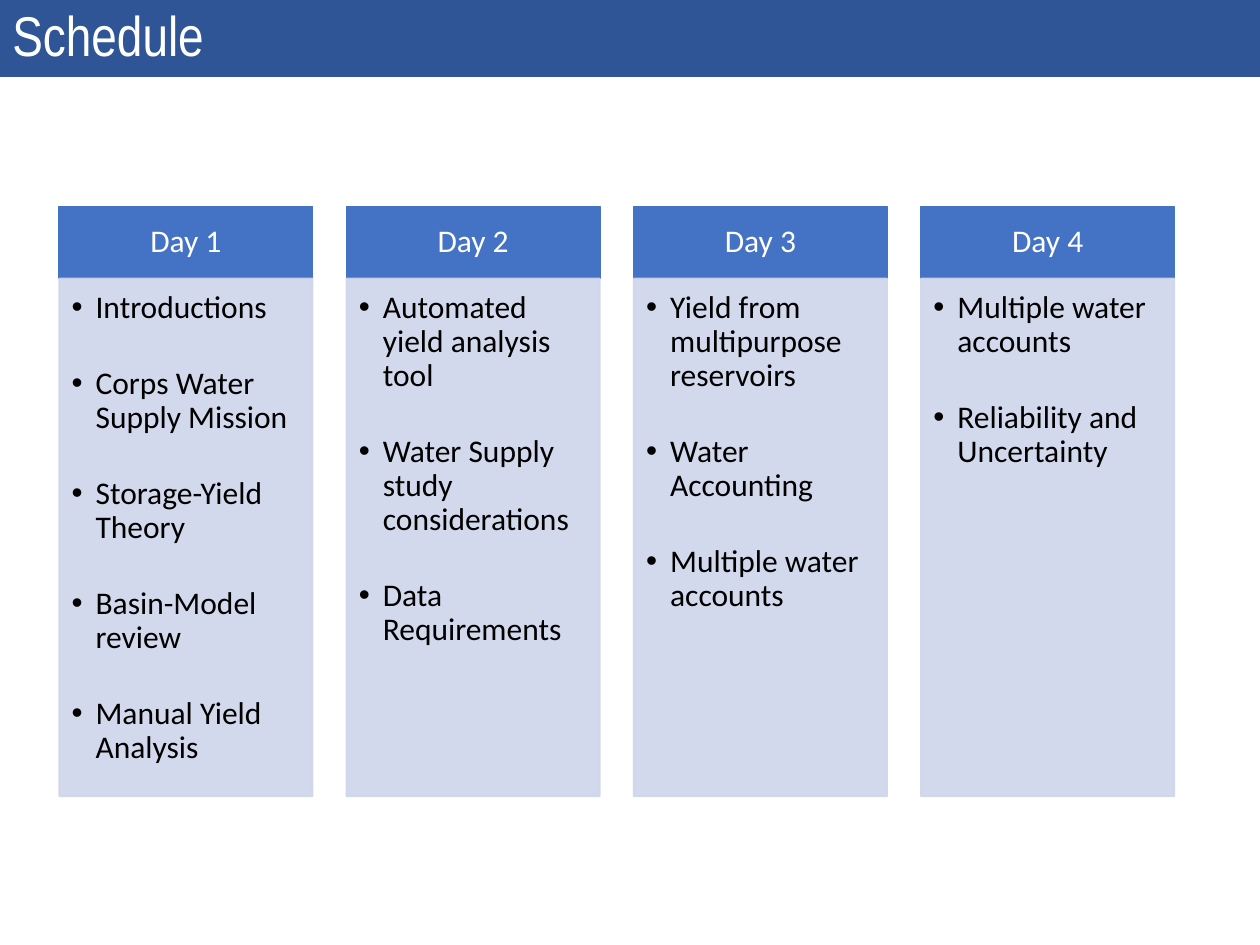
from dataclasses import dataclass

from lxml.etree import SubElement
from pptx import Presentation
from pptx.dml.color import RGBColor
from pptx.enum.shapes import MSO_SHAPE
from pptx.enum.text import MSO_ANCHOR, PP_ALIGN
from pptx.oxml.ns import qn
from pptx.util import Inches, Pt


@dataclass(frozen=True)
class Theme:
    """Colours, fonts and type sizes of the slide."""
    banner: str = "2F5597"
    header: str = "4472C4"
    panel: str = "CFD5EA"
    light: str = "FFFFFF"
    dark: str = "000000"
    title_font: str = "Arial Narrow"
    body_font: str = "Calibri"
    title_size: int = 32
    body_size: int = 18


THEME = Theme()
DAYS = [
    ("Day 1", ["Introductions", "Corps Water Supply Mission", "Storage-Yield Theory",
               "Basin-Model review", "Manual Yield Analysis"]),
    ("Day 2", ["Automated yield analysis tool", "Water Supply study considerations",
               "Data Requirements"]),
    ("Day 3", ["Yield from multipurpose reservoirs", "Water Accounting",
               "Multiple water accounts"]),
    ("Day 4", ["Multiple water accounts", "Reliability and Uncertainty"]),
]


def add_box(s, box, color, margins, anchor, outlined=True):
    """Add a filled rectangle with text margins in inches and return it."""
    sp = s.shapes.add_shape(MSO_SHAPE.RECTANGLE, *map(Inches, box))
    sp.shadow.inherit = False
    sp.fill.solid()
    sp.fill.fore_color.rgb = RGBColor.from_string(color)
    if outlined:
        sp.line.color.rgb = RGBColor.from_string(color)
        sp.line.width = Pt(1)
    else:
        sp.line.fill.background()
    tf = sp.text_frame
    tf.word_wrap = True
    tf.vertical_anchor = anchor
    tf.margin_left, tf.margin_top, tf.margin_right, tf.margin_bottom = map(Inches, margins)
    return sp


def style_paragraph(p, align, font, size, color):
    """Set the alignment, line spacing and run format of a paragraph."""
    p.alignment = align
    p.line_spacing = 0.9
    for r in p.runs:
        r.font.name = font
        r.font.size = Pt(size)
        r.font.color.rgb = RGBColor.from_string(color)


def set_opacity(sp, percent):
    """Give the fill and outline of a shape the same opacity."""
    for color in sp._element.spPr.iter(qn("a:srgbClr")):
        SubElement(color, qn("a:alpha"), val=str(percent * 1000))


def add_bullet(p, indent):
    """Give a paragraph a round bullet with a hanging indent in inches."""
    pPr = p._p.get_or_add_pPr()
    pPr.set("marL", str(Inches(indent)))
    pPr.set("indent", str(-Inches(indent)))
    SubElement(pPr, qn("a:buFont"), typeface="Arial")
    SubElement(pPr, qn("a:buChar"), char="•")


def add_banner(s, box, text):
    """Place the title banner."""
    sp = add_box(s, box, THEME.banner, (0.1, 0.05, 0.1, 0.05), MSO_ANCHOR.MIDDLE, False)
    p = sp.text_frame.paragraphs[0]
    p.text = text
    style_paragraph(p, PP_ALIGN.LEFT, THEME.title_font, THEME.title_size, THEME.light)


def add_day(s, box, day, topics):
    """Place one day column: a header above a panel of bulleted topics."""
    left, top, width, height = box
    header_h = 0.57
    header = add_box(s, (left, top, width, header_h), THEME.header,
                     (0.14, 0.08, 0.14, 0.08), MSO_ANCHOR.MIDDLE)
    p = header.text_frame.paragraphs[0]
    p.text = day
    style_paragraph(p, PP_ALIGN.CENTER, THEME.body_font, THEME.body_size, THEME.light)

    panel = add_box(s, (left, top + header_h, width, height - header_h), THEME.panel,
                    (0.1, 0.1, 0.14, 0.16), MSO_ANCHOR.TOP)
    set_opacity(panel, 90)
    tf = panel.text_frame
    tf.text = "\n".join(topics)
    for p in tf.paragraphs:
        add_bullet(p, 0.19)
        style_paragraph(p, PP_ALIGN.LEFT, THEME.body_font, THEME.body_size, THEME.dark)
        p.space_after = Pt(24)


def add_schedule(s, box, days, gap):
    """Place the day columns at equal gaps across the box."""
    left, top, width, height = box
    col_w = (width - gap * (len(days) - 1)) / len(days)
    for i, (day, topics) in enumerate(days):
        add_day(s, (left + i * (col_w + gap), top, col_w, height), day, topics)


def main():
    """Build and save the schedule slide."""
    prs = Presentation()
    prs.slide_width, prs.slide_height = Inches(10), Inches(7.5)
    s = prs.slides.add_slide(prs.slide_layouts[6])
    add_schedule(s, (0.47, 1.64, 8.85, 4.68), DAYS, 0.27)
    add_banner(s, (0, 0, 10, 0.61), "Schedule")
    prs.save("out.pptx")


if __name__ == "__main__":
    main()
